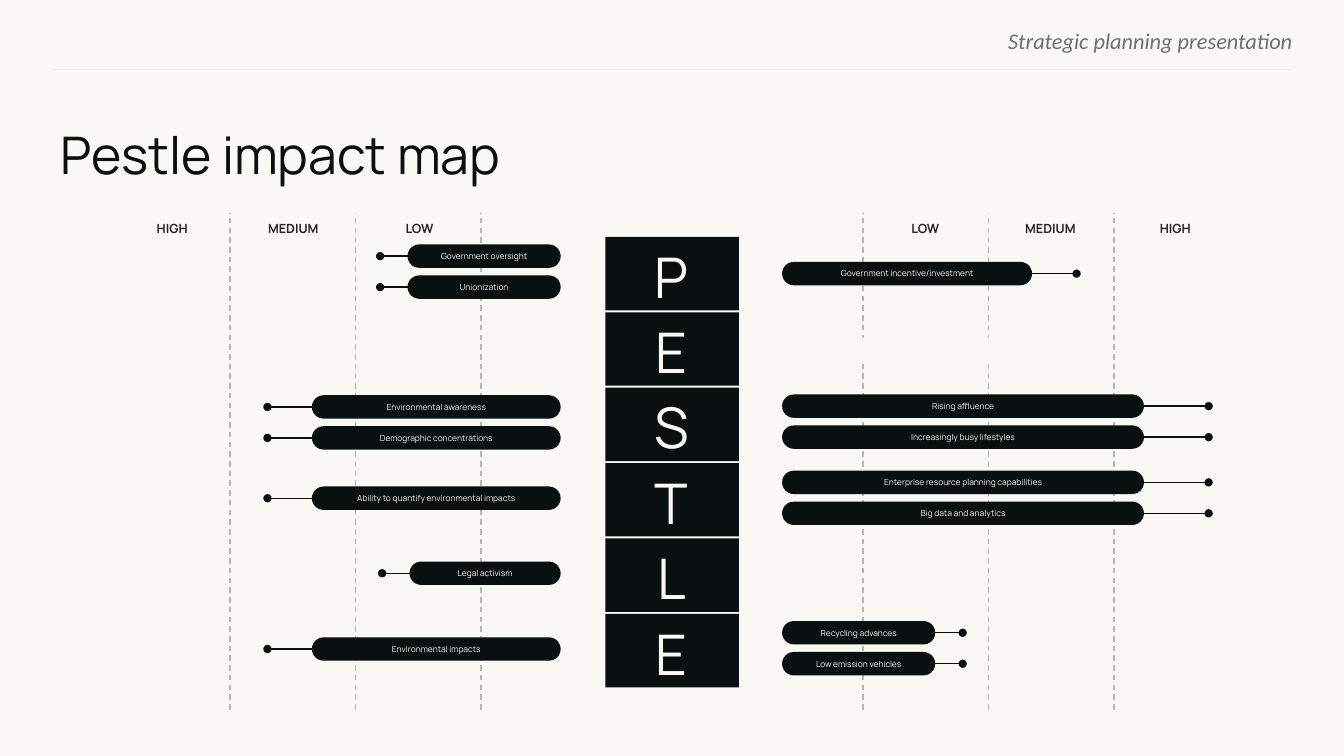
from dataclasses import dataclass

from lxml import etree
from pptx import Presentation
from pptx import util as u
from pptx.dml.color import RGBColor
from pptx.enum import dml, shapes, text
from pptx.oxml.ns import qn
from pptx.shapes.autoshape import Shape
from pptx.shapes.connector import Connector
from pptx.slide import Slide

PAPER = RGBColor(0xF9, 0xF8, 0xF5)
INK = RGBColor(0x09, 0x10, 0x0F)
LABEL_GREY = RGBColor(0x26, 0x26, 0x26)
HEADER_GREY = RGBColor(0x6C, 0x70, 0x6F)
GUIDE_GREY = RGBColor(0xB5, 0xB7, 0xB7)
RULE_GREY = RGBColor(0xEF, 0xEF, 0xEF)

PILL_HEIGHT = 0.59
LEFT_PILLS_END = 14.13
RIGHT_PILLS_START = 19.71
GUIDE_STEP = 3.16
TILE_TOP, TILE_STEP = 5.97, 1.9


@dataclass(frozen=True)
class Box:
    left: float
    top: float
    width: float
    height: float


@dataclass(frozen=True)
class TextStyle:
    size: float
    color: RGBColor
    font: str = "Manrope"
    align: text.PP_ALIGN = text.PP_ALIGN.CENTER
    bold: bool = False
    italic: bool = False


@dataclass(frozen=True)
class Factor:
    name: str
    top: float
    width: float
    tail: float


@dataclass(frozen=True)
class Label:
    name: str
    left: float


PILL_TEXT = TextStyle(6, PAPER)
LETTER_TEXT = TextStyle(40, PAPER)
LABEL_TEXT = TextStyle(9, LABEL_GREY, bold=True)
TITLE_TEXT = TextStyle(37, INK, align=text.PP_ALIGN.LEFT)
HEADER_TEXT = TextStyle(16, HEADER_GREY, "Calibri", text.PP_ALIGN.RIGHT, italic=True)

LEFT_FACTORS = [
    Factor("Government oversight", 6.16, 3.86, 0.69),
    Factor("Unionization", 6.94, 3.86, 0.69),
    Factor("Environmental awareness", 9.96, 6.27, 1.12),
    Factor("Demographic concentrations", 10.74, 6.27, 1.12),
    Factor("Ability to quantify environmental impacts", 12.26, 6.27, 1.12),
    Factor("Legal activism", 14.15, 3.81, 0.69),
    Factor("Environmental impacts", 16.06, 6.27, 1.12),
]
RIGHT_FACTORS = [
    Factor("Government incentive/investment", 6.6, 6.3, 1.12),
    Factor("Rising affluence", 9.94, 9.12, 1.63),
    Factor("Increasingly busy lifestyles", 10.72, 9.12, 1.63),
    Factor("Enterprise resource planning capabilities", 11.86, 9.12, 1.63),
    Factor("Big data and analytics", 12.64, 9.12, 1.63),
    Factor("Recycling advances", 15.65, 3.86, 0.69),
    Factor("Low emission vehicles", 16.43, 3.86, 0.69),
]
LABELS = [
    Label("HIGH", 3.02),
    Label("MEDIUM", 6.07),
    Label("LOW", 9.25),
    Label("LOW", 22),
    Label("MEDIUM", 25.15),
    Label("HIGH", 28.3),
]


def write_text(shape: Shape, words: str, style: TextStyle) -> None:
    frame = shape.text_frame
    frame.text = words
    frame.word_wrap = True
    para = frame.paragraphs[0]
    para.alignment = style.align
    font = para.runs[0].font
    font.name = style.font
    font.size = u.Pt(style.size)
    font.bold = style.bold
    font.italic = style.italic
    font.color.rgb = style.color


def clear_margins(shape: Shape) -> None:
    frame = shape.text_frame
    frame.margin_left = frame.margin_right = u.Cm(0)
    frame.margin_top = frame.margin_bottom = u.Cm(0)


def add_text(page: Slide, box: Box, words: str, style: TextStyle) -> Shape:
    shape = page.shapes.add_textbox(
        u.Cm(box.left), u.Cm(box.top), u.Cm(box.width), u.Cm(box.height))
    clear_margins(shape)
    write_text(shape, words, style)
    return shape


def add_block(page: Slide, kind: shapes.MSO_SHAPE, box: Box, color: RGBColor) -> Shape:
    shape = page.shapes.add_shape(
        kind, u.Cm(box.left), u.Cm(box.top), u.Cm(box.width), u.Cm(box.height))
    shape.shadow.inherit = False
    shape.fill.solid()
    shape.fill.fore_color.rgb = color
    shape.line.fill.background()
    shape.text_frame.vertical_anchor = text.MSO_ANCHOR.MIDDLE
    return shape


def add_pill(page: Slide, box: Box, color: RGBColor) -> Shape:
    pill = add_block(page, shapes.MSO_SHAPE.ROUNDED_RECTANGLE, box, color)
    pill.adjustments[0] = 0.5
    return pill


def add_line(page: Slide, start: tuple[float, float], end: tuple[float, float],
             color: RGBColor, weight: float = 1) -> Connector:
    line = page.shapes.add_connector(
        shapes.MSO_CONNECTOR.STRAIGHT,
        u.Cm(start[0]), u.Cm(start[1]), u.Cm(end[0]), u.Cm(end[1]))
    line.line.color.rgb = color
    line.line.width = u.Pt(weight)
    etree.SubElement(line._element.spPr, qn("a:effectLst"))
    return line


def add_guides(page: Slide, first: float) -> None:
    for index in range(3):
        x = first + index * GUIDE_STEP
        guide = add_line(page, (x, 17.88), (x, 5.36), GUIDE_GREY)
        guide.line.dash_style = dml.MSO_LINE.DASH


def add_factor(page: Slide, factor: Factor, on_left: bool) -> None:
    left = LEFT_PILLS_END - factor.width if on_left else RIGHT_PILLS_START
    edge = left if on_left else left + factor.width
    tip = edge - factor.tail if on_left else edge + factor.tail
    middle = factor.top + PILL_HEIGHT / 2
    pill = add_pill(page, Box(left, factor.top, factor.width, PILL_HEIGHT), INK)
    write_text(pill, factor.name, PILL_TEXT)
    tail = add_line(page, (tip, middle), (edge, middle), INK)
    etree.SubElement(tail.line._get_or_add_ln(), qn("a:headEnd"), type="oval")


def add_tile(page: Slide, index: int, letter: str) -> None:
    top = TILE_TOP + index * TILE_STEP
    rectangle = shapes.MSO_SHAPE.RECTANGLE
    add_block(page, rectangle, Box(15.26, top, 3.36, 1.85), INK)
    cell = add_block(page, rectangle, Box(16.31, top + 0.13, 1.22, 1.7), INK)
    clear_margins(cell)
    write_text(cell, letter, LETTER_TEXT)
    cell.text_frame.auto_size = text.MSO_AUTO_SIZE.SHAPE_TO_FIT_TEXT


def main() -> None:
    deck = Presentation()
    deck.slide_width, deck.slide_height = u.Cm(33.87), u.Cm(19.05)
    page = deck.slides.add_slide(deck.slide_layouts[6])
    page.background.fill.solid()
    page.background.fill.fore_color.rgb = PAPER

    add_text(page, Box(19.51, 0.69, 13.06, 0.61),
             "Strategic planning presentation", HEADER_TEXT)
    add_line(page, (32.56, 1.75), (1.32, 1.75), RULE_GREY, 0.75)
    add_guides(page, 5.8)
    add_guides(page, 21.75)
    add_pill(page, Box(RIGHT_PILLS_START, 8.51, 6.3, PILL_HEIGHT), PAPER)
    for factor in RIGHT_FACTORS:
        add_factor(page, factor, on_left=False)
    for factor in LEFT_FACTORS:
        add_factor(page, factor, on_left=True)
    for index, letter in enumerate("PESTLE"):
        add_tile(page, index, letter)
    for label in LABELS:
        shape = add_text(page, Box(label.left, 5.28, 2.64, 0.38), label.name, LABEL_TEXT)
        shape.text_frame.paragraphs[0].line_spacing = 1.76
    add_text(page, Box(1.52, 3.1, 31.24, 1.73), "Pestle impact map", TITLE_TEXT)
    deck.save("out.pptx")


if __name__ == "__main__":
    main()
